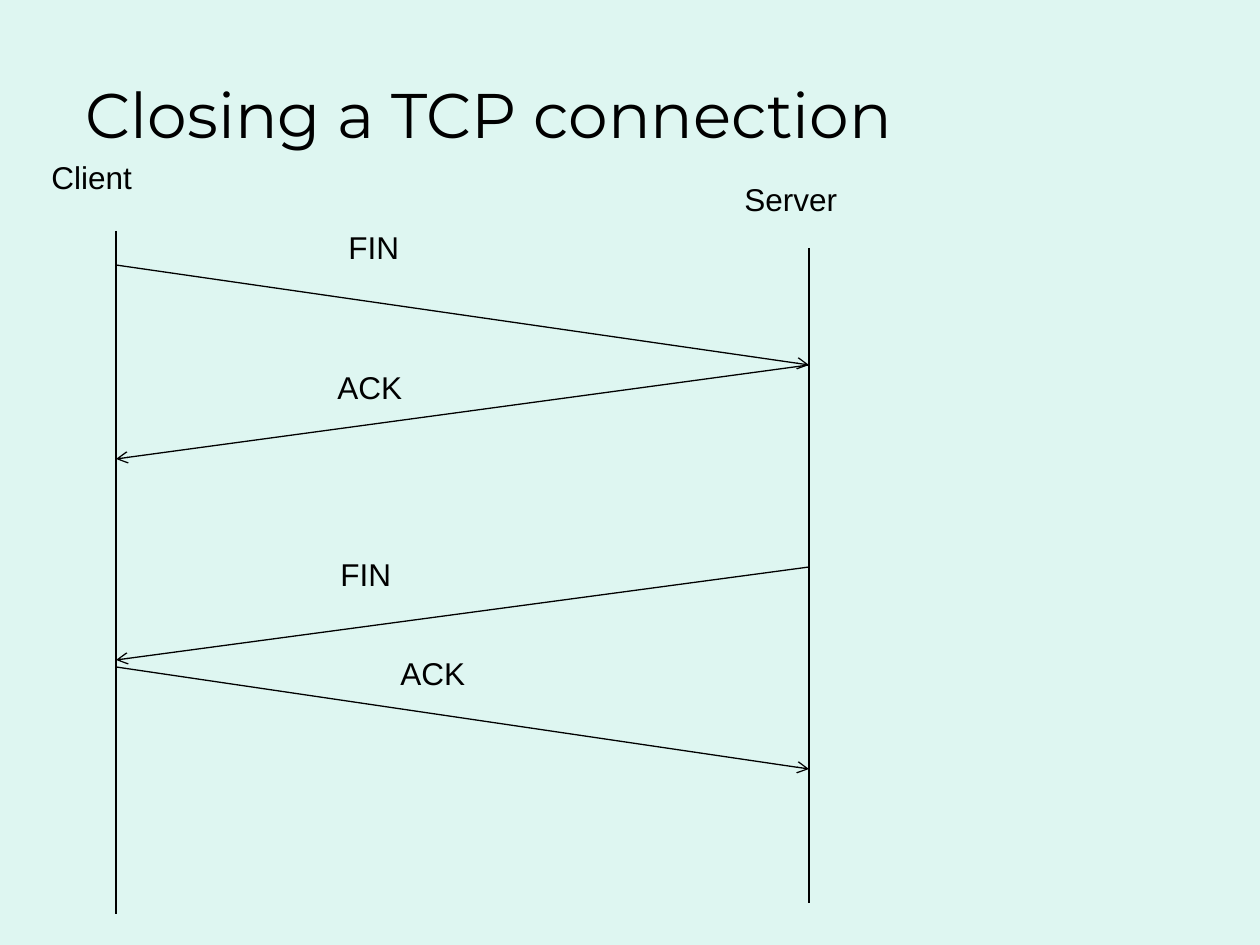
from dataclasses import dataclass

from lxml.etree import SubElement
from pptx import Presentation
from pptx.dml.color import RGBColor
from pptx.enum.shapes import MSO_CONNECTOR
from pptx.enum.text import MSO_ANCHOR, MSO_AUTO_SIZE, PP_ALIGN
from pptx.oxml.ns import qn
from pptx.slide import Slide
from pptx.text.text import TextFrame
from pptx.util import Emu, Pt

EMU_PER_PX = 914400 / 126
MINT = RGBColor(0xDE, 0xF6, 0xF1)
BLACK = RGBColor(0x00, 0x00, 0x00)
CLIENT_X, SERVER_X = 116, 809
LABEL_HEIGHT = 50


@dataclass(frozen=True)
class Label:
    text: str
    left: int
    top: int
    width: int


@dataclass(frozen=True)
class Host:
    x: int
    top: int
    bottom: int
    label: Label


@dataclass(frozen=True)
class Message:
    from_x: int
    from_y: int
    to_x: int
    to_y: int
    label: Label


HOSTS = [
    Host(CLIENT_X, 231, 914, Label("Client", 39, 152, 152)),
    Host(SERVER_X, 248, 903, Label("Server", 732, 174, 152)),
]
MESSAGES = [
    Message(CLIENT_X, 265, SERVER_X, 365, Label("FIN", 336, 222, 499)),
    Message(SERVER_X, 365, CLIENT_X, 459, Label("ACK", 325, 362, 481)),
    Message(SERVER_X, 567, CLIENT_X, 660, Label("FIN", 328, 549, 426)),
    Message(CLIENT_X, 667, SERVER_X, 769, Label("ACK", 388, 648, 446)),
]


def px(length: int) -> Emu:
    """Turn pixels into EMU."""
    return Emu(round(length * EMU_PER_PX))


def write(frame: TextFrame, text: str, font_name: str, size: int) -> None:
    """Fill a text frame with one left-aligned black paragraph."""
    frame.text = text
    frame.word_wrap = True
    paragraph = frame.paragraphs[0]
    paragraph.alignment = PP_ALIGN.LEFT
    font = paragraph.runs[0].font
    font.name = font_name
    font.size = Pt(size)
    font.color.rgb = BLACK


def draw_title(slide: Slide, text: str) -> None:
    """Place and format the slide title."""
    title = slide.shapes.title
    title.left, title.top, title.width, title.height = map(px, (73, 73, 1050, 94))
    write(title.text_frame, text, "Montserrat", 36)
    title.text_frame.auto_size = MSO_AUTO_SIZE.NONE
    title.text_frame.vertical_anchor = MSO_ANCHOR.MIDDLE
    title.text_frame.paragraphs[0].line_spacing = 0.8


def draw_label(slide: Slide, label: Label) -> None:
    """Draw a host or message label."""
    box = slide.shapes.add_textbox(
        px(label.left), px(label.top), px(label.width), px(LABEL_HEIGHT)
    )
    write(box.text_frame, label.text, "Arial", 18)
    box.text_frame.auto_size = MSO_AUTO_SIZE.SHAPE_TO_FIT_TEXT


def draw_line(
    slide: Slide, from_x: int, from_y: int, to_x: int, to_y: int, arrow: bool = False
) -> None:
    """Draw a thin black line, with an open arrowhead at its end if asked."""
    connector = slide.shapes.add_connector(
        MSO_CONNECTOR.STRAIGHT, px(from_x), px(from_y), px(to_x), px(to_y)
    )
    connector.line.color.rgb = BLACK
    connector.line.width = Pt(0.75)
    if arrow:
        SubElement(connector.line._get_or_add_ln(), qn("a:tailEnd"), type="arrow")
    SubElement(connector._element.spPr, qn("a:effectLst"))


def main() -> None:
    """Build and save the slide."""
    presentation = Presentation()
    presentation.slide_width, presentation.slide_height = px(1260), px(945)
    slide = presentation.slides.add_slide(presentation.slide_layouts[5])
    slide.background.fill.solid()
    slide.background.fill.fore_color.rgb = MINT

    draw_title(slide, "Closing a TCP connection")
    for host in HOSTS:
        draw_label(slide, host.label)
        draw_line(slide, host.x, host.top, host.x, host.bottom)
    for message in MESSAGES:
        draw_line(
            slide, message.from_x, message.from_y, message.to_x, message.to_y, arrow=True
        )
        draw_label(slide, message.label)
    presentation.save("out.pptx")


if __name__ == "__main__":
    main()
